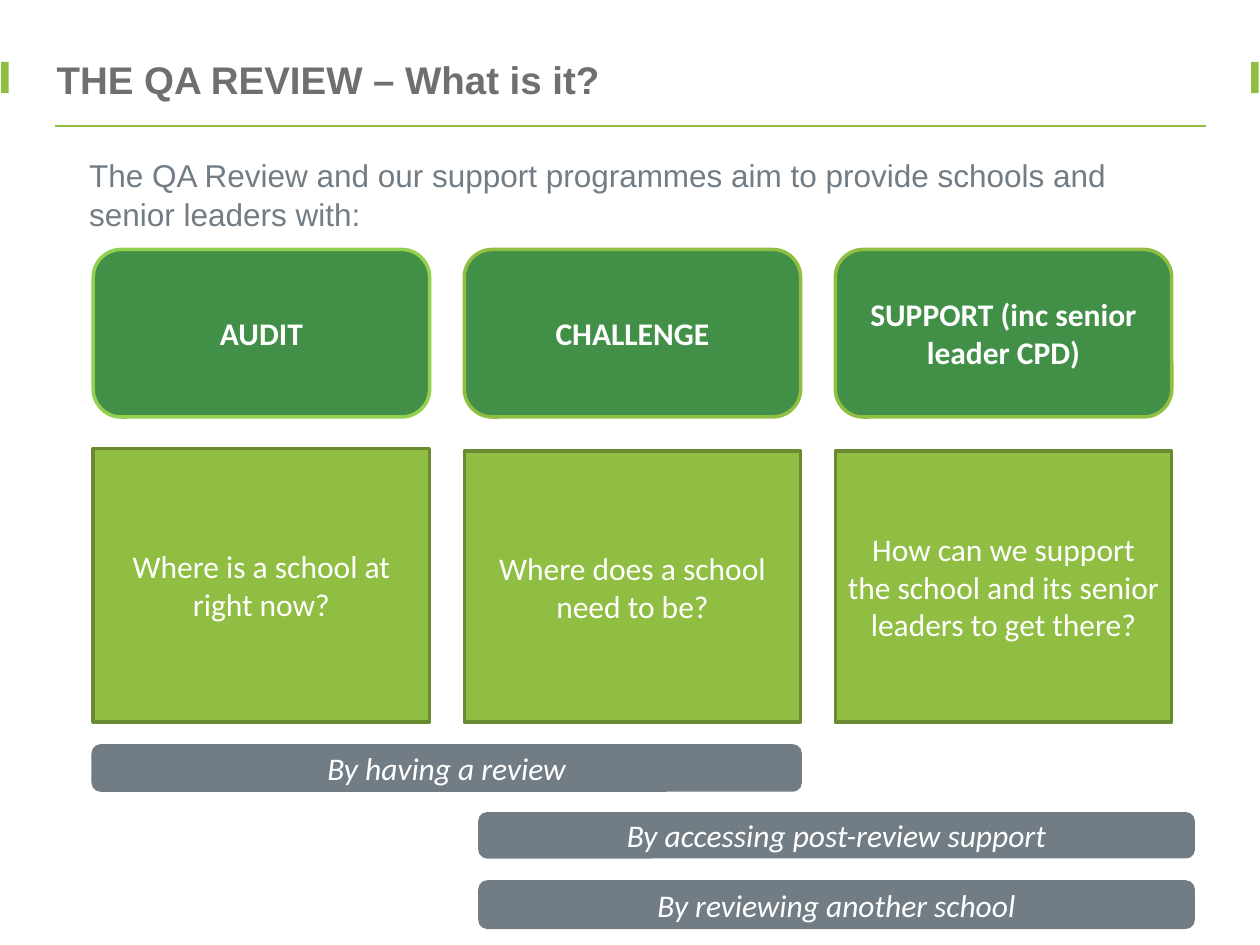
from pptx import Presentation
from pptx.dml.color import RGBColor
from pptx.enum.shapes import MSO_CONNECTOR, MSO_SHAPE
from pptx.enum.text import MSO_ANCHOR as ANCHOR, PP_ALIGN as ALIGN
from pptx.oxml.ns import qn
from pptx.util import Inches, Pt

LIME, GREEN, OLIVE, SLATE = "90BE43", "428F47", "698A30", "727C84"
RECT, ROUND = MSO_SHAPE.RECTANGLE, MSO_SHAPE.ROUNDED_RECTANGLE


def rgb(value):
    """Turn a hex string into a colour."""
    return RGBColor.from_string(value)


def add_text(sp, text, size=18, font="Calibri", color="FFFFFF", bold=False,
             italic=False, align=ALIGN.CENTER, anchor=ANCHOR.MIDDLE, spacing=None):
    """Write one formatted paragraph into a shape."""
    tf = sp.text_frame
    tf.word_wrap = True
    tf.vertical_anchor = anchor
    p = tf.paragraphs[0]
    p.alignment, p.line_spacing = align, spacing
    r = p.add_run()
    r.text = text
    r.font.size, r.font.name = Pt(size), font
    r.font.bold, r.font.italic = bold, italic
    r.font.color.rgb = rgb(color)
    return tf


def add_box(s, kind, box, fill, line=None):
    """Place a filled shape, with an outline if one is given."""
    sp = s.shapes.add_shape(kind, *map(Inches, box))
    sp.shadow.inherit = False
    sp.fill.solid()
    sp.fill.fore_color.rgb = rgb(fill)
    if line:
        sp.line.color.rgb = rgb(line)
        sp.line.width = Pt(2)
    else:
        sp.line.fill.background()
    return sp


def add_header(s, left, top, width, height, title):
    """Place the title, the rule below it and the edge markers."""
    rule = s.shapes.add_connector(MSO_CONNECTOR.STRAIGHT, Inches(0.44), Inches(1),
                                  Inches(9.57), Inches(1))
    rule.line.color.rgb = rgb(LIME)
    rule.line.width = Pt(1)
    props = rule.element.spPr
    props.append(props.makeelement(qn("a:effectLst"), {}))
    for x in (0.01, 9.93):
        add_box(s, RECT, (x, 0.49, 0.06, 0.25), LIME)
    sp = s.shapes.add_textbox(*map(Inches, (left, top, width, height)))
    tf = add_text(sp, title, size=22, font="Arial", color="6D6F71", bold=True,
                  align=ALIGN.LEFT)
    tf.margin_left = tf.margin_right = tf.margin_top = tf.margin_bottom = 0


def add_intro(s, left, top, width, height, text):
    """Place the introductory sentence."""
    sp = s.shapes.add_textbox(*map(Inches, (left, top, width, height)))
    add_text(sp, text, font="Arial", color=SLATE, align=ALIGN.LEFT,
             anchor=ANCHOR.TOP, spacing=1.05)


def add_column(s, left, top, width, height, heading, question, edge, gap):
    """Place a heading with its question below, filling the column."""
    head_height = 1.33
    head = add_box(s, ROUND, (left, top, width, head_height), GREEN, edge)
    add_text(head, heading, bold=True)
    offset = head_height + gap
    body = add_box(s, RECT, (left, top + offset, width, height - offset), LIME, OLIVE)
    add_text(body, question)


def add_bar(s, left, top, width, height, text):
    """Place a bar that names one way to reach the aims."""
    add_text(add_box(s, ROUND, (left, top, width, height), SLATE, SLATE), text, italic=True)


def main():
    """Build and save the slide."""
    prs = Presentation()
    prs.slide_width, prs.slide_height = Inches(10), Inches(7.5)
    s = prs.slides.add_slide(prs.slide_layouts[6])
    add_header(s, 0.45, 0.42, 9.3, 0.41, "THE QA REVIEW – What is it?")
    add_intro(s, 0.61, 1.17, 8.56, 0.71,
              "The QA Review and our support programmes aim to provide schools "
              "and senior leaders with:")
    columns = [
        ("AUDIT", "Where is a school at right now?", "92D050", 0.25),
        ("CHALLENGE", "Where does a school need to be?", LIME, 0.27),
        ("SUPPORT (inc senior leader CPD)",
         "How can we support the school and its senior leaders to get there?", LIME, 0.27),
    ]
    for i, column in enumerate(columns):
        add_column(s, 0.74 + 2.945 * i, 1.98, 2.67, 3.75, *column)
    add_bar(s, 0.74, 5.92, 5.61, 0.35, "By having a review")
    add_bar(s, 3.81, 6.46, 5.66, 0.34, "By accessing post-review support")
    add_bar(s, 3.81, 7, 5.66, 0.36, "By reviewing another school")
    prs.save("out.pptx")


if __name__ == "__main__":
    main()
